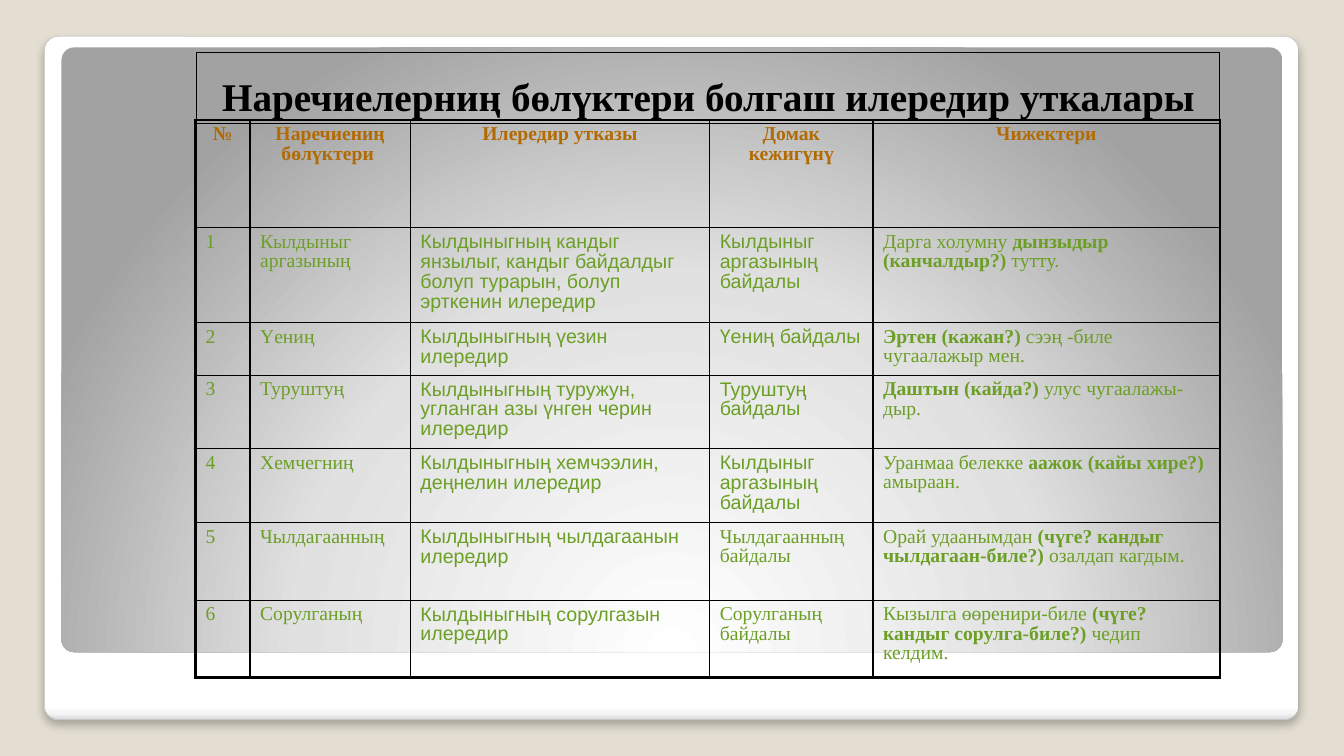
from pptx import Presentation
from pptx.dml.color import RGBColor
from pptx.enum.shapes import MSO_SHAPE
from pptx.enum.text import MSO_ANCHOR, PP_ALIGN
from pptx.oxml import parse_xml
from pptx.oxml.ns import nsdecls
from pptx.util import Inches, Pt

TITLE = "Наречиелерниң бөлүктери болгаш илередир уткалары"
HEAD = ["№", "Наречиениң бөлүктери ", "Илередир утказы", "Домак кежигүнү", "Чижектери"]
# Each example is three parts; the middle one is bold.
ROWS = [
    ("Кылдыныг аргазының",
     "Кылдыныгның кандыг янзылыг, кандыг байдалдыг болуп турарын, болуп эрткенин илередир",
     "Кылдыныг аргазының байдалы",
     ("Дарга холумну ", "дынзыдыр (канчалдыр?)", " тутту.")),
    ("Үениң", "Кылдыныгның үезин илередир", "Үениң байдалы",
     ("", "Эртен (кажан?)", " сээң -биле чугаалажыр мен.")),
    ("Туруштуң", "Кылдыныгның туружун, угланган азы үнген черин илередир",
     "Туруштуң байдалы",
     ("", "Даштын (кайда?)", " улус чугаалажы-дыр.")),
    ("Хемчегниң", "Кылдыныгның хемчээлин, деңнелин илередир",
     "Кылдыныг аргазының байдалы",
     ("Уранмаа белекке ", "аажок (кайы хире?)", " амыраан.")),
    ("Чылдагаанның", "Кылдыныгның чылдагаанын илередир", "Чылдагаанның байдалы",
     ("Орай удаанымдан ", "(чүге? кандыг чылдагаан-биле?)", " озалдап кагдым.")),
    ("Сорулганың", "Кылдыныгның сорулгазын илередир", "Сорулганың байдалы",
     ("Кызылга өөренири-биле ", "(чүге? кандыг сорулга-биле?)", " чедип келдим.")),
]
WIDTHS = [0.54, 1.59, 2.97, 1.62, 3.44]
HEIGHTS = [1.07, 0.93, 0.49, 0.69, 0.69, 0.77, 0.77]
SERIF, SANS = "Times New Roman", "Arial"
BLACK, GREEN, BROWN = "000000", "6B9F25", "B26B02"
CARD = [(0, "FFFFFF"), (98, "FFFFFF"), (99, "F7F7F7"), (100, "DADADA")]
PANEL = [(0, "FFFFFF"), (55, "E1E1E1"), (100, "A2A2A2")]
DOWN = '<a:lin ang="5400000" scaled="0"/>'
GLOW = ('<a:path path="circle"><a:fillToRect l="50000" t="175000" '
        'r="50000" b="-75000"/></a:path>')


def rgb(code):
    return RGBColor.from_string(code)


def style(font, size, color, bold=False, name=SERIF):
    font.size, font.bold, font.name = Pt(size), bold, name
    font.color.rgb = rgb(color)


def add_round(slide, box, stops, way, edge=None):
    """Add a rounded rectangle with a gradient running the given way."""
    shape = slide.shapes.add_shape(MSO_SHAPE.ROUNDED_RECTANGLE, *map(Inches, box))
    shape.adjustments[0] = 0.021
    shape.shadow.inherit = False
    if edge:
        shape.line.color.rgb = rgb(edge)
        shape.line.width = Pt(0.16)
    else:
        shape.line.fill.background()
    marks = "".join(f'<a:gs pos="{pos * 1000}"><a:srgbClr val="{color}"/></a:gs>'
                    for pos, color in stops)
    shape.line._ln.addprevious(parse_xml(
        f'<a:gradFill {nsdecls("a")} rotWithShape="1">'
        f'<a:gsLst>{marks}</a:gsLst>{way}</a:gradFill>'))
    return shape


def add_shade(shape):
    effects = shape._element.spPr.find(
        "{http://schemas.openxmlformats.org/drawingml/2006/main}effectLst")
    effects.append(parse_xml(
        f'<a:outerShdw {nsdecls("a")} blurRad="{Pt(6)}" dist="{Pt(4)}" '
        'dir="5400000" algn="t" rotWithShape="0">'
        f'<a:srgbClr val="{BLACK}"><a:alpha val="25000"/></a:srgbClr></a:outerShdw>'))


def frame(cell, row, col):
    """Rule a cell: thick on the rim of the table, thin inside."""
    rim = {"L": col == 0, "R": col == len(WIDTHS) - 1,
           "T": row == 0, "B": row == len(HEIGHTS) - 1}
    props = cell._tc.get_or_add_tcPr()
    for side, outer in rim.items():
        props.append(parse_xml(
            f'<a:ln{side} {nsdecls("a")} w="{Pt(2.25 if outer else 1)}">'
            f'<a:solidFill><a:srgbClr val="{BLACK}"/></a:solidFill></a:ln{side}>'))
    cell.fill.background()


def write(cell, text, row, col):
    para = cell.text_frame.paragraphs[0]
    para.line_spacing, para.space_before = 0.9, Pt(10)
    para.alignment = PP_ALIGN.LEFT if row else PP_ALIGN.CENTER
    sans = row and (col == 2 or col == 3 and row < 5)
    parts = text if isinstance(text, tuple) else (text,)
    for i, part in enumerate(parts):
        if part:
            run = para.add_run()
            run.text = part
            style(run.font, 14, GREEN if row else BROWN,
                  not row or i == 1, SANS if sans else SERIF)


def add_grid(slide):
    data = [HEAD] + [(str(n), *row) for n, row in enumerate(ROWS, 1)]
    table = slide.shapes.add_table(
        len(data), len(HEAD), Inches(1.94), Inches(1.19),
        Inches(sum(WIDTHS)), Inches(sum(HEIGHTS))).table
    table.first_row = table.horz_banding = False
    for col, width in enumerate(WIDTHS):
        table.columns[col].width = Inches(width)
    for row, texts in enumerate(data):
        table.rows[row].height = Inches(HEIGHTS[row])
        for col, text in enumerate(texts):
            cell = table.cell(row, col)
            frame(cell, row, col)
            write(cell, text, row, col)


def add_title(slide):
    box = slide.shapes.add_textbox(*map(Inches, (1.95, 0.52, 10.15, 0.71)))
    box.line.color.rgb = rgb(BLACK)
    box.line.width = Pt(0.75)
    text = box.text_frame
    text.word_wrap = True
    text.vertical_anchor = MSO_ANCHOR.BOTTOM
    para = text.paragraphs[0]
    para.text = TITLE
    para.alignment = PP_ALIGN.CENTER
    style(para.font, 28, BLACK, True)


def main():
    deck = Presentation()
    deck.slide_width, deck.slide_height = Inches(13.33), Inches(7.5)
    slide = deck.slides.add_slide(deck.slide_layouts[6])
    back = slide.background.fill
    back.solid()
    back.fore_color.rgb = rgb("E3DED1")
    add_shade(add_round(slide, (0.44, 0.36, 12.44, 6.78), CARD, DOWN, "A4A4A4"))
    add_round(slide, (0.61, 0.47, 12.11, 6), PANEL, GLOW)
    add_title(slide)
    add_grid(slide)
    deck.save("out.pptx")


if __name__ == "__main__":
    main()
